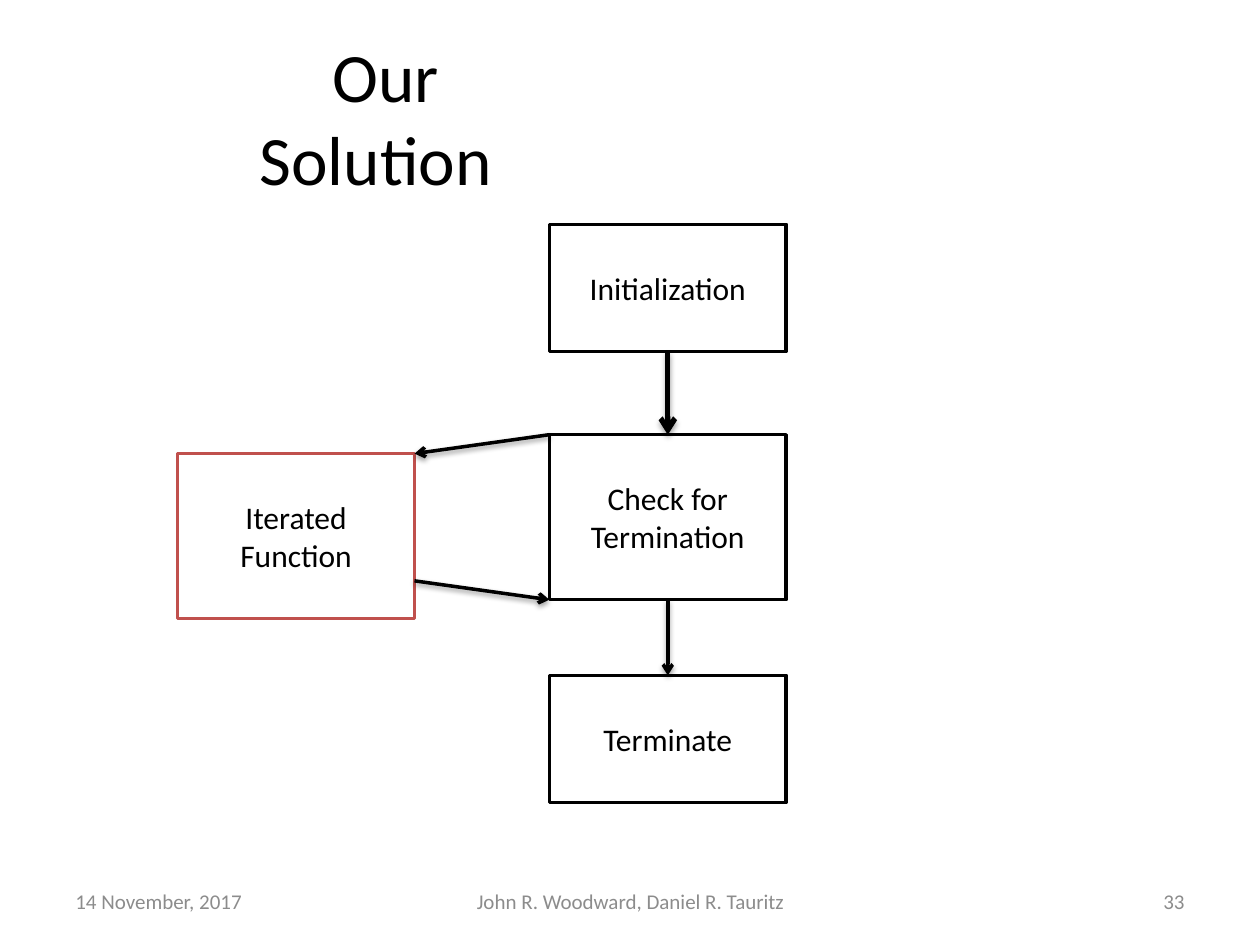
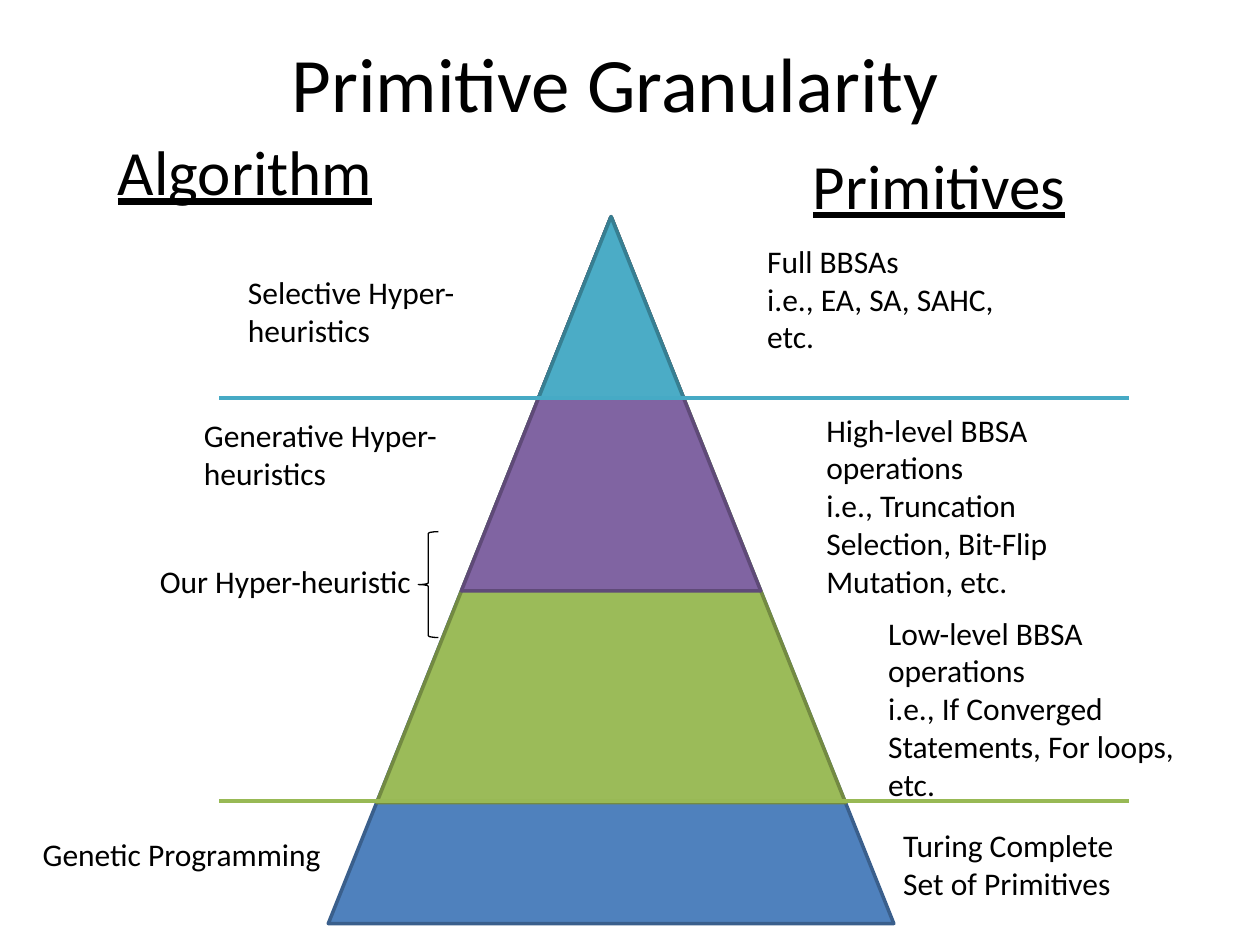
from lxml.etree import SubElement
from pptx import Presentation
from pptx.dml.color import RGBColor as RGB
from pptx.enum.shapes import MSO_CONNECTOR as LINK, MSO_SHAPE as SHAPE
from pptx.enum.text import MSO_ANCHOR as ANCHOR, PP_ALIGN as ALIGN
from pptx.oxml.ns import qn
from pptx.util import Inches, Pt

FONT = "Calibri"
COLORS = {
    "black": "000000", "white": "FFFFFF", "grey": "8C8C8C", "red": "C0504D",
    "blue": "4F81BD", "blue_edge": "3A5F8C",
    "green": "9BBB59", "green_edge": "738A42", "green_line": "98B955",
    "purple": "8064A2", "purple_edge": "5F4A78",
    "teal": "4BACC6", "teal_edge": "377F92", "teal_line": "46AAC5",
}
PAINT = {name: RGB.from_string(code) for name, code in COLORS.items()}
COLUMNS, ROWS = 100, 75

deck = Presentation()
deck.slide_width, deck.slide_height = Inches(10), Inches(7.5)
CELL_W, CELL_H = deck.slide_width / COLUMNS, deck.slide_height / ROWS


def grid(*lengths):
    return [round(length * (CELL_H if i % 2 else CELL_W)) for i, length in enumerate(lengths)]


def write(box, text, size=18, color="black", align=ALIGN.LEFT, anchor=ANCHOR.TOP, underline=None):
    frame = box.text_frame
    frame.word_wrap = True
    frame.vertical_anchor = anchor
    frame.text = text
    for para in frame.paragraphs:
        para.alignment = align
        for span in para.runs:
            span.font.name = FONT
            span.font.size = Pt(size)
            span.font.color.rgb = PAINT[color]
            span.font.underline = underline


flow, pyramid = [deck.slides.add_slide(deck.slide_layouts[6]) for _ in range(2)]

for page, title, place, size in [
    (flow, "Our Solution\t", (16.2, 3, 28.8, 12.5), 39.6),
    (pyramid, "Primitive Granularity", (13.6, 2.1, 70.5, 8.7), 44),
]:
    box = page.shapes.add_textbox(*grid(*place))
    write(box, title, size, align=ALIGN.CENTER, anchor=ANCHOR.MIDDLE)

STEP_W, MAIN_X, LOOP_X = 18.8, 43.6, 14.1
CHECK_Y, CHECK_H, LOOP_Y = 34.5, 13.1, 36
steps = {}
for label, x, y, height, edge in [
    ("Initialization", MAIN_X, 17.8, 10.1, "black"),
    ("Check for Termination", MAIN_X, CHECK_Y, CHECK_H, "black"),
    ("Terminate", MAIN_X, 53.6, 10.1, "black"),
    ("Iterated Function", LOOP_X, LOOP_Y, CHECK_H, "red"),
]:
    step = flow.shapes.add_shape(SHAPE.RECTANGLE, *grid(x, y, STEP_W, height))
    step.shadow.inherit = False
    step.fill.solid()
    step.fill.fore_color.rgb = PAINT["white"]
    step.line.color.rgb = PAINT[edge]
    step.line.width = Pt(2)
    write(step, label, align=ALIGN.CENTER, anchor=ANCHOR.MIDDLE)
    steps[label] = step

loop_right = LOOP_X + STEP_W
loop_exit, check_bottom = LOOP_Y + 10.1, CHECK_Y + CHECK_H
start, check, finish = [steps[name] for name in ("Initialization", "Check for Termination", "Terminate")]
for ends, joined, width, alpha, distance in [
    ((0, 0, 0, 0), (start, check), 3, 35, 1.8),
    ((0, 0, 0, 0), (check, finish), 2, 38, 1.6),
    ((MAIN_X, CHECK_Y, loop_right, LOOP_Y), None, 2, 38, 1.6),
    ((loop_right, loop_exit, MAIN_X, check_bottom), None, 2, 38, 1.6),
]:
    arrow = flow.shapes.add_connector(LINK.STRAIGHT, *grid(*ends))
    if joined:
        arrow.begin_connect(joined[0], 2)
        arrow.end_connect(joined[1], 0)
    arrow.line.color.rgb = PAINT["black"]
    arrow.line.width = Pt(width)
    SubElement(arrow.line._get_or_add_ln(), qn("a:tailEnd"), type="arrow")
    effects = SubElement(arrow._element.spPr, qn("a:effectLst"))
    shadow = SubElement(effects, qn("a:outerShdw"), blurRad=str(Pt(3.1)), dist=str(Pt(distance)),
                        dir="5400000", rotWithShape="0")
    shade = SubElement(shadow, qn("a:srgbClr"), val=COLORS["black"])
    SubElement(shade, qn("a:alpha"), val=str(alpha * 1000))

for text, x, width, align in [
    ("33", 71.7, 23.3, ALIGN.RIGHT),
    ("John R. Woodward, Daniel R. Tauritz", 34.2, 31.7, ALIGN.CENTER),
    ("14 November, 2017", 5, 23.3, ALIGN.LEFT),
]:
    footer = flow.shapes.add_textbox(*grid(x, 69.5, width, 4))
    write(footer, text, 12, "grey", align, ANCHOR.MIDDLE)

APEX_X, APEX_Y, SLOPE = 48.5, 17.2, 0.8
for color, height in [("blue", 56.1), ("green", 46.5), ("purple", 29.7), ("teal", 14.4)]:
    width = height * SLOPE
    level = pyramid.shapes.add_shape(
        SHAPE.ISOSCELES_TRIANGLE, *grid(APEX_X - width / 2, APEX_Y, width, height))
    level.shadow.inherit = False
    level.fill.solid()
    level.fill.fore_color.rgb = PAINT[color]
    level.line.color.rgb = PAINT[color + "_edge"]
    level.line.width = Pt(2)

for heading, x, y in [("Primitives", 62.2, 11.1), ("Algorithm", 7.1, 10)]:
    box = pyramid.shapes.add_textbox(*grid(x, y, 24.7, 7.1))
    write(box, heading, 36, align=ALIGN.CENTER, underline=True)

for text, *place in [
    ("Full BBSAs\ni.e., EA, SA, SAHC, etc.", 59.9, 18.7, 22.1, 10.1),
    ("Selective Hyper-heuristics", 18.7, 21.2, 23.7, 7.1),
    ("Our Hyper-heuristic", 11.7, 44.1, 23.7, 4),
    ("Turing Complete Set of Primitives", 70.7, 65.1, 22.1, 7.1),
    ("Generative Hyper-heuristics", 15.2, 32.5, 26.2, 7.1),
    ("High-level BBSA operations\ni.e., Truncation Selection, Bit-Flip Mutation, etc.", 64.6, 32.1, 26.2, 16.2),
    ("Low-level BBSA operations\ni.e., If Converged Statements, For loops, etc.", 69.5, 48.2, 27.5, 16.2),
    ("Genetic Programming", 2.4, 65.8, 26.2, 4),
]:
    write(pyramid.shapes.add_textbox(*grid(*place)), text)

for color, y in [("teal_line", 31.6), ("green_line", 63.6)]:
    divider = pyramid.shapes.add_connector(LINK.STRAIGHT, *grid(89.6, y, 17.4, y))
    divider.line.color.rgb = PAINT[color]
    divider.line.width = Pt(2.25)
    SubElement(divider._element.spPr, qn("a:effectLst"))

brace = pyramid.shapes.add_shape(SHAPE.LEFT_BRACE, *grid(33.2, 42.2, 1.6, 8.4))
brace.shadow.inherit = False
brace.fill.background()
brace.line.color.rgb = PAINT["black"]
brace.line.width = Pt(0.75)

deck.save("out.pptx")
